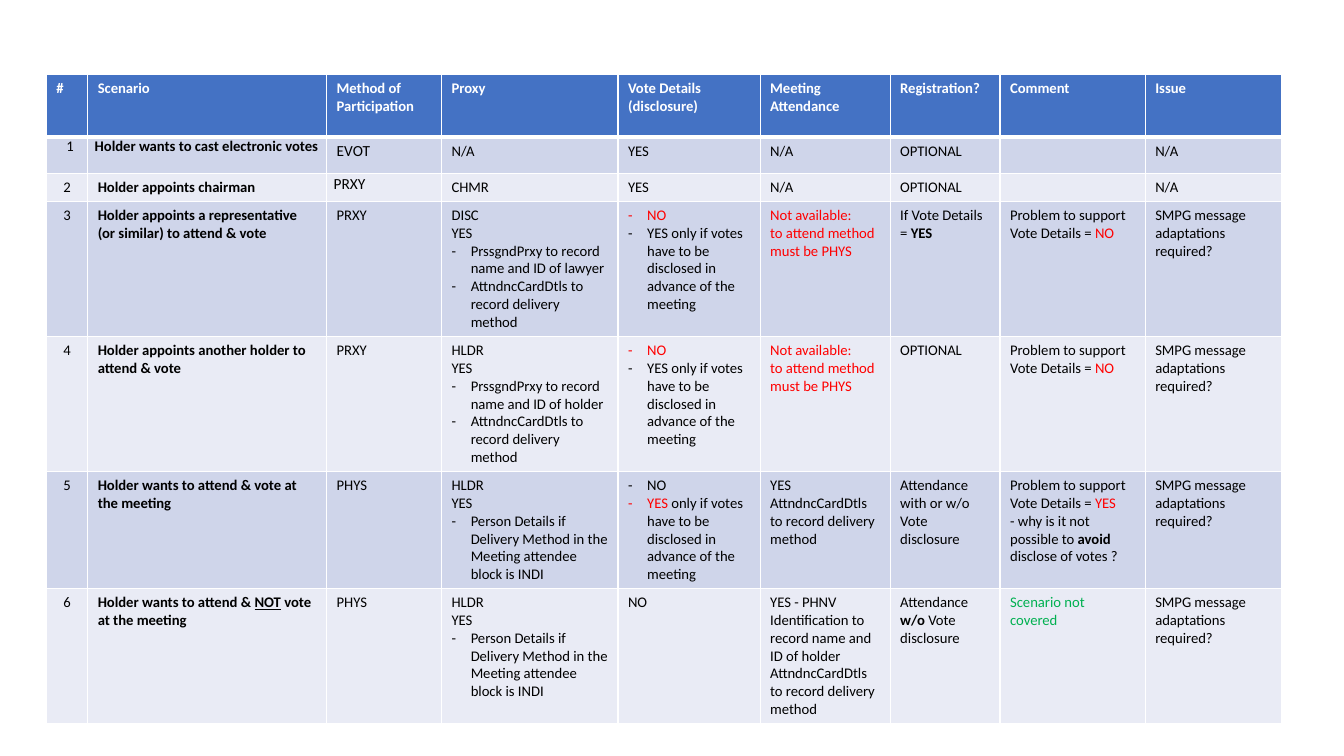
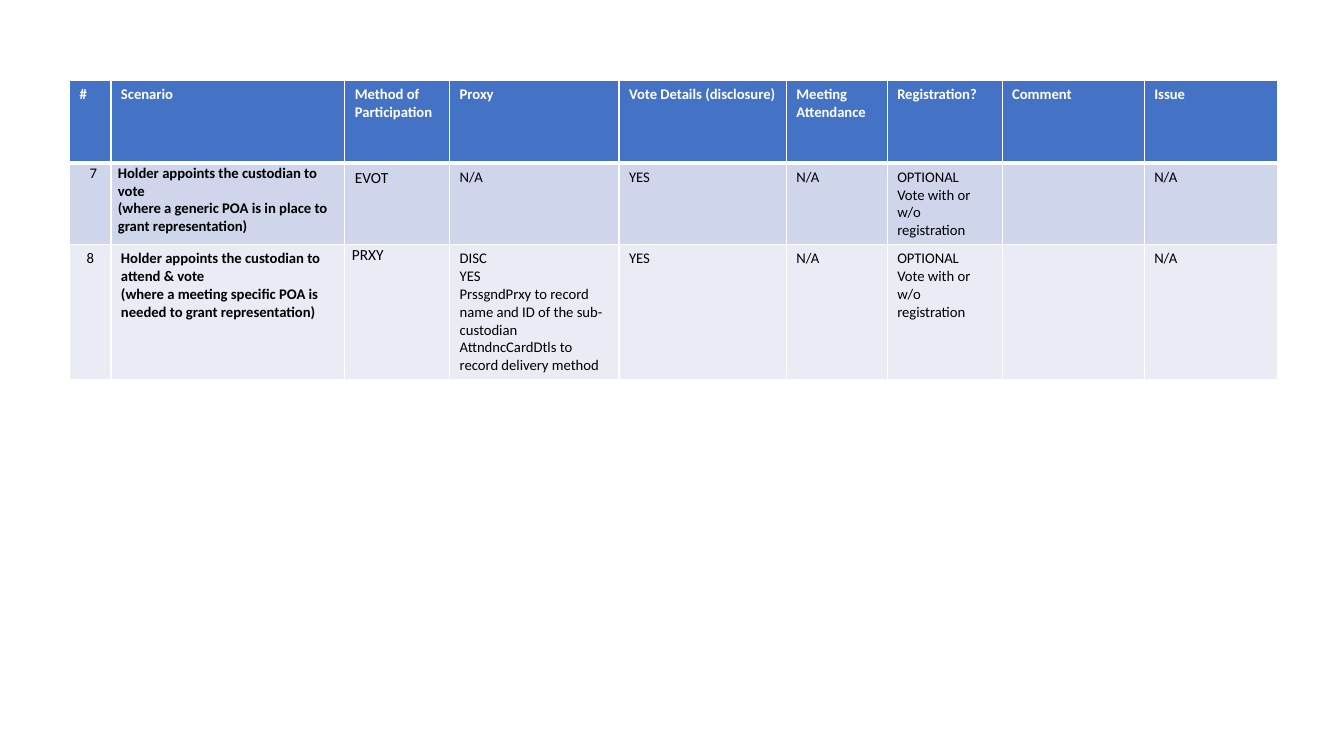
from dataclasses import dataclass

from lxml.etree import SubElement
from pptx import Presentation
from pptx.dml.color import RGBColor
from pptx.enum.text import PP_ALIGN
from pptx.oxml.ns import qn
from pptx.util import Inches, Pt


@dataclass(frozen=True)
class Theme:
    font: str = "Calibri"
    size: float = 10.5
    large: float = 11
    white: str = "FFFFFF"
    black: str = "000000"
    red: str = "FF0000"
    green: str = "00B050"
    head: str = "4472C4"
    bands: tuple = ("CFD5EA", "E9EBF5")
    rule: float = 1
    thick: float = 3


THEME = Theme()


@dataclass(frozen=True)
class Run:
    text: str
    color: str = THEME.black
    bold: bool = False
    under: bool = False


@dataclass(frozen=True)
class Item:
    """A paragraph with a dash in front."""
    runs: tuple


def red(text):
    return Run(text, THEME.red)


def item(*runs):
    return Item(runs)


# A cell is a list of paragraphs; a paragraph is a string, a Run,
# a tuple of both, or an Item.
HEADS = ["#", "Scenario", "Method of Participation", "Proxy",
         "Vote Details (disclosure)", "Meeting Attendance",
         "Registration?", "Comment", "Issue"]

CARD = "AttndncCardDtls to record delivery method"
ONLY = " only if votes have to be disclosed in advance of the meeting"
ASK = "Problem to support Vote Details = "
ADAPT = ["SMPG message adaptations required?"]
HIDDEN = [item(red("NO")), item("YES" + ONLY)]
ABSENT = [red("Not available:"), red("to attend method must be PHYS")]
PERSON = ["HLDR", "YES",
          item("Person Details if Delivery Method in the Meeting "
               "attendee block is INDI")]
OPTION = ["OPTIONAL", "Vote with or w/o registration"]
NONE = ["N/A"]


def proxy(code, who):
    return [code, "YES",
            item(f"PrssgndPrxy to record name and ID of {who}"), item(CARD)]


HOLDERS = [
    [["1"], ["Holder wants to cast electronic votes"], ["EVOT"], NONE,
     ["YES"], NONE, ["OPTIONAL"], [], NONE],
    [["2"], ["Holder appoints chairman"], ["PRXY"], ["CHMR"],
     ["YES"], NONE, ["OPTIONAL"], [], NONE],
    [["3"],
     ["Holder appoints a representative (or similar) to attend & vote"],
     ["PRXY"], proxy("DISC", "lawyer"), HIDDEN, ABSENT,
     [("If Vote Details = ", Run("YES", bold=True))],
     [(ASK, red("NO"))], ADAPT],
    [["4"], ["Holder appoints another holder to attend & vote"],
     ["PRXY"], proxy("HLDR", "holder"), HIDDEN, ABSENT,
     ["OPTIONAL"], [(ASK, red("NO"))], ADAPT],
    [["5"], ["Holder wants to attend & vote at the meeting"],
     ["PHYS"], PERSON, [item("NO"), item(red("YES"), ONLY)],
     ["YES", CARD], ["Attendance with or w/o Vote disclosure"],
     [(ASK, red("YES")),
      ("- why is it not possible to ", Run("avoid", bold=True),
       " disclose of votes ?")], ADAPT],
    [["6"],
     [("Holder wants to attend & ", Run("NOT", under=True),
       " vote at the meeting")],
     ["PHYS"], PERSON, ["NO"],
     ["YES - PHNV",
      f"Identification to record name and ID of holder {CARD}"],
     [("Attendance ", Run("w/o ", bold=True), "Vote disclosure")],
     [Run("Scenario not covered", THEME.green)], ADAPT],
]

CUSTODY = [
    [["7"],
     ["Holder appoints the custodian to vote",
      "(where a generic POA is in place to grant representation)"],
     ["EVOT"], NONE, ["YES"], NONE, OPTION, [], NONE],
    [["8"],
     ["Holder appoints the custodian to attend & vote",
      "(where a meeting specific POA is needed to grant representation)"],
     ["PRXY"],
     ["DISC", "YES",
      f"PrssgndPrxy to record name and ID of the sub-custodian {CARD}"],
     ["YES"], NONE, OPTION, [], NONE],
]

# Cells that sit close to their edge, and cells in larger type (row, column)
TIGHT = {(1, 0), (1, 1), (2, 2)}
LARGE = {(1, 2), (2, 2)}


def edge(cell, side, width):
    line = SubElement(cell._tc.get_or_add_tcPr(), qn(f"a:ln{side}"),
                      w=str(Pt(width)))
    fill = SubElement(line, qn("a:solidFill"))
    SubElement(fill, qn("a:srgbClr"), val=THEME.white)


def indent(para, left, first=0):
    props = para._p.get_or_add_pPr()
    props.set("marL", str(Inches(left)))
    props.set("indent", str(Inches(first)))
    return props


def dash(para):
    props = indent(para, 0.19, -0.19)
    SubElement(props, qn("a:buFont"), typeface=THEME.font)
    SubElement(props, qn("a:buChar"), char="-")


def write(para, runs, size, bold=False, color=None):
    for part in runs:
        spec = part if isinstance(part, Run) else Run(part)
        run = para.add_run()
        run.text = spec.text
        font = run.font
        font.name, font.size = THEME.font, Pt(size)
        font.bold = bold or spec.bold
        font.underline = spec.under
        font.color.rgb = RGBColor.from_string(color or spec.color)


def fill_cell(cell, paras, row, col):
    """Style one cell by its place in the table and write its paragraphs."""
    top, tight = row == 0, (row, col) in TIGHT
    for side in "LRTB":
        heavy = (top and side == "B") or (row == 1 and side == "T")
        edge(cell, side, THEME.thick if heavy else THEME.rule)
    cell.fill.solid()
    shade = THEME.head if top else THEME.bands[(row - 1) % 2]
    cell.fill.fore_color.rgb = RGBColor.from_string(shade)
    if tight:
        cell.margin_left = cell.margin_top = cell.margin_right = Inches(0.01)
        cell.margin_bottom = 0
    frame = cell.text_frame
    if not paras:
        SubElement(frame.paragraphs[0]._p, qn("a:endParaRPr"),
                   sz=str(int(THEME.size * 100)))
    for i, spec in enumerate(paras):
        para = frame.add_paragraph() if i else frame.paragraphs[0]
        if tight:
            indent(para, 0.06)
        if isinstance(spec, Item):
            dash(para)
            spec = spec.runs
        if col == 0 and not top:
            para.alignment = PP_ALIGN.CENTER
        write(para, spec if isinstance(spec, tuple) else (spec,),
              THEME.large if (row, col) in LARGE else THEME.size,
              bold=top or col == 1, color=THEME.white if top else None)


def add_grid(deck, left, top, widths, heights, body):
    """Add a slide with one scenario table."""
    slide = deck.slides.add_slide(deck.slide_layouts[6])
    rows = [[[head] for head in HEADS]] + body
    table = slide.shapes.add_table(
        len(rows), len(HEADS), Inches(left), Inches(top),
        Inches(sum(widths)), Inches(sum(heights))).table
    for column, width in zip(table.columns, widths):
        column.width = Inches(width)
    for line, height in zip(table.rows, heights):
        line.height = Inches(height)
    for r, cells in enumerate(rows):
        for c, paras in enumerate(cells):
            fill_cell(table.cell(r, c), paras, r, c)


def main():
    deck = Presentation()
    deck.slide_width, deck.slide_height = Inches(13.33), Inches(7.5)
    add_grid(deck, 0.46, 0.74,
             [0.41, 2.37, 1.14, 1.75, 1.41, 1.29, 1.09, 1.44, 1.35],
             [0.62, 0.36, 0.28, 1.34, 1.34, 1.16, 1.34], HOLDERS)
    add_grid(deck, 0.69, 0.8,
             [0.41, 2.32, 1.04, 1.68, 1.66, 1, 1.14, 1.41, 1.32],
             [0.82, 0.81, 1.33], CUSTODY)
    deck.save("out.pptx")


if __name__ == "__main__":
    main()
